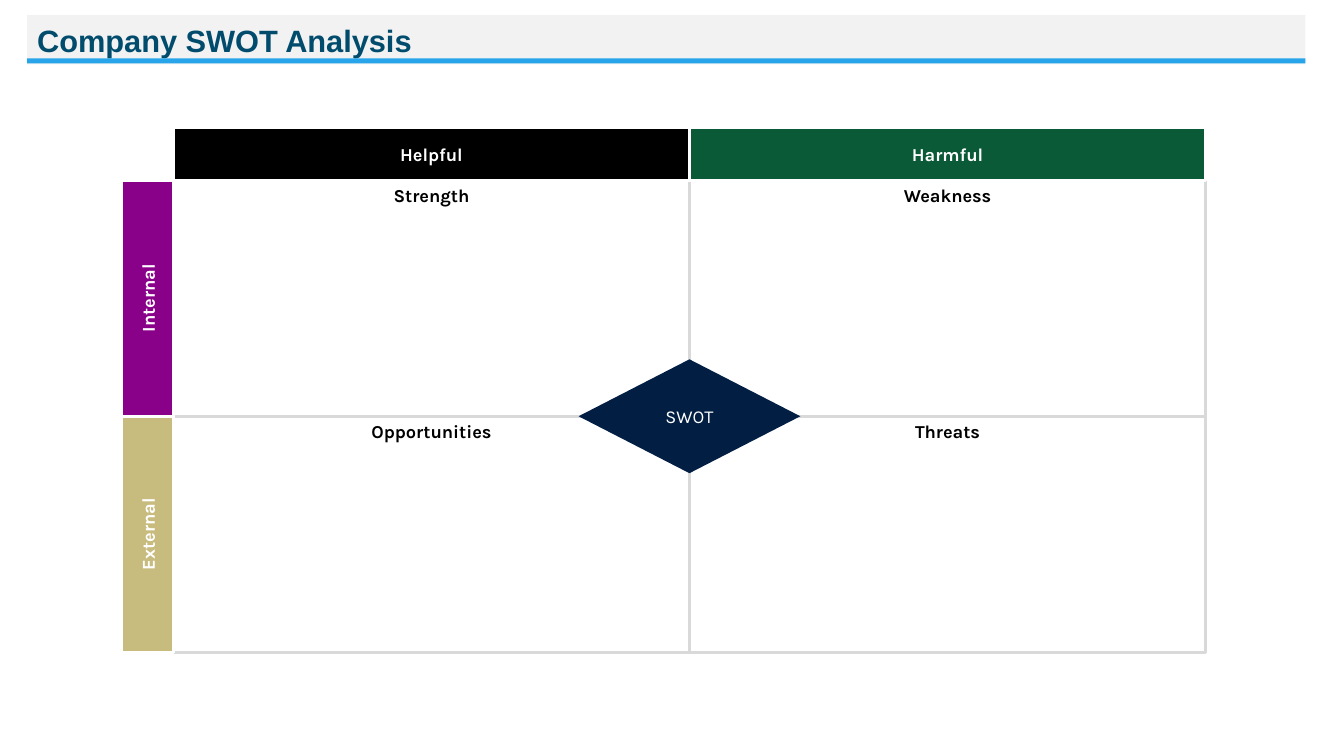
from dataclasses import dataclass
from typing import Optional

from pptx import Presentation
from pptx import util as u
from pptx.dml import color
from pptx.enum import shapes, text


@dataclass(frozen=True)
class Theme:
    font: str = "Karla"
    head: str = "Arial"
    size: float = 13
    big: float = 22
    edge: float = 2
    black: str = "000000"
    white: str = "FFFFFF"
    grid: str = "D9D9D9"
    band: str = "F2F2F2"
    title: str = "014C6D"
    rule: str = "27A4EA"
    green: str = "0B5A37"
    plum: str = "890089"
    sand: str = "C8BB7E"
    navy: str = "021F43"


T = Theme()


@dataclass(frozen=True)
class Box:
    left: float
    top: float
    width: float
    height: float
    words: str = ""
    fill: Optional[str] = None
    line: Optional[str] = None
    ink: str = T.white
    font: str = T.font
    size: float = T.size
    bold: bool = True
    form: shapes.MSO_SHAPE = shapes.MSO_SHAPE.RECTANGLE
    anchor: text.MSO_ANCHOR = text.MSO_ANCHOR.MIDDLE
    align: text.PP_ALIGN = text.PP_ALIGN.CENTER
    inset: tuple[float, float] = (5.04, 2.88)
    turn: bool = False


def rgb(code: str) -> color.RGBColor:
    return color.RGBColor.from_string(code)


def write(shape, box: Box) -> None:
    frame = shape.text_frame
    frame.text = box.words
    frame.word_wrap = True
    frame.vertical_anchor = box.anchor
    frame.margin_left = frame.margin_right = u.Pt(box.inset[0])
    frame.margin_top = frame.margin_bottom = u.Pt(box.inset[1])
    if box.turn:
        shape.element.txBody.bodyPr.set("vert", "vert270")
    line = frame.paragraphs[0]
    line.alignment = box.align
    font = line.runs[0].font
    font.name, font.size, font.bold = box.font, u.Pt(box.size), box.bold
    font.color.rgb = rgb(box.ink)


def draw(slide, box: Box) -> None:
    shape = slide.shapes.add_shape(
        box.form, u.Pt(box.left), u.Pt(box.top), u.Pt(box.width), u.Pt(box.height)
    )
    shape.shadow.inherit = False
    if box.fill:
        shape.fill.solid()
        shape.fill.fore_color.rgb = rgb(box.fill)
    else:
        shape.fill.background()
    if box.line:
        shape.line.color.rgb = rgb(box.line)
        shape.line.width = u.Pt(T.edge)
    else:
        shape.line.fill.background()
    if box.words:
        write(shape, box)


def plan() -> list[Box]:
    left, top, wide, high = 123.84, 128.88, 368.64, 168.48
    head, side = 37.44, 36.72
    gem_w, gem_h = 158.4, 81.36
    edge, span = 19.44, 912.96
    grid = (("Strength", "Weakness"), ("Opportunities", "Threats"))
    cols = (("Helpful", T.black), ("Harmful", T.green))
    rows = (("Internal", T.plum), ("External", T.sand))

    title = Box(edge, 10.8, span, 35.28, "Company SWOT Analysis", T.band,
                ink=T.title, font=T.head, size=T.big,
                align=text.PP_ALIGN.LEFT, inset=(7.2, 3.6))
    cells = [
        Box(left + c * wide, top + r * high, wide, high, word,
            line=T.grid, ink=T.black, anchor=text.MSO_ANCHOR.TOP)
        for r, row in enumerate(grid) for c, word in enumerate(row)
    ]
    heads = [
        Box(left + c * wide, top - head, wide, head, word, fill, T.white)
        for c, (word, fill) in enumerate(cols)
    ]
    sides = [
        Box(left - side, top + r * high, side, high, word, fill, T.white, turn=True)
        for r, (word, fill) in enumerate(rows)
    ]
    gem = Box(left + wide - gem_w / 2, top + high - gem_h / 2, gem_w, gem_h,
              "SWOT", T.navy, bold=False, form=shapes.MSO_SHAPE.DIAMOND, inset=(0, 0))
    rule = Box(edge, 41.76, span, 3.6, fill=T.rule)
    return [title, *cells, *heads, *sides, gem, rule]


def main() -> None:
    """Build the SWOT slide and save it."""
    deck = Presentation()
    deck.slide_width, deck.slide_height = u.Pt(960), u.Pt(540)
    slide = deck.slides.add_slide(deck.slide_layouts[6])
    for box in plan():
        draw(slide, box)
    deck.save("out.pptx")


if __name__ == "__main__":
    main()
